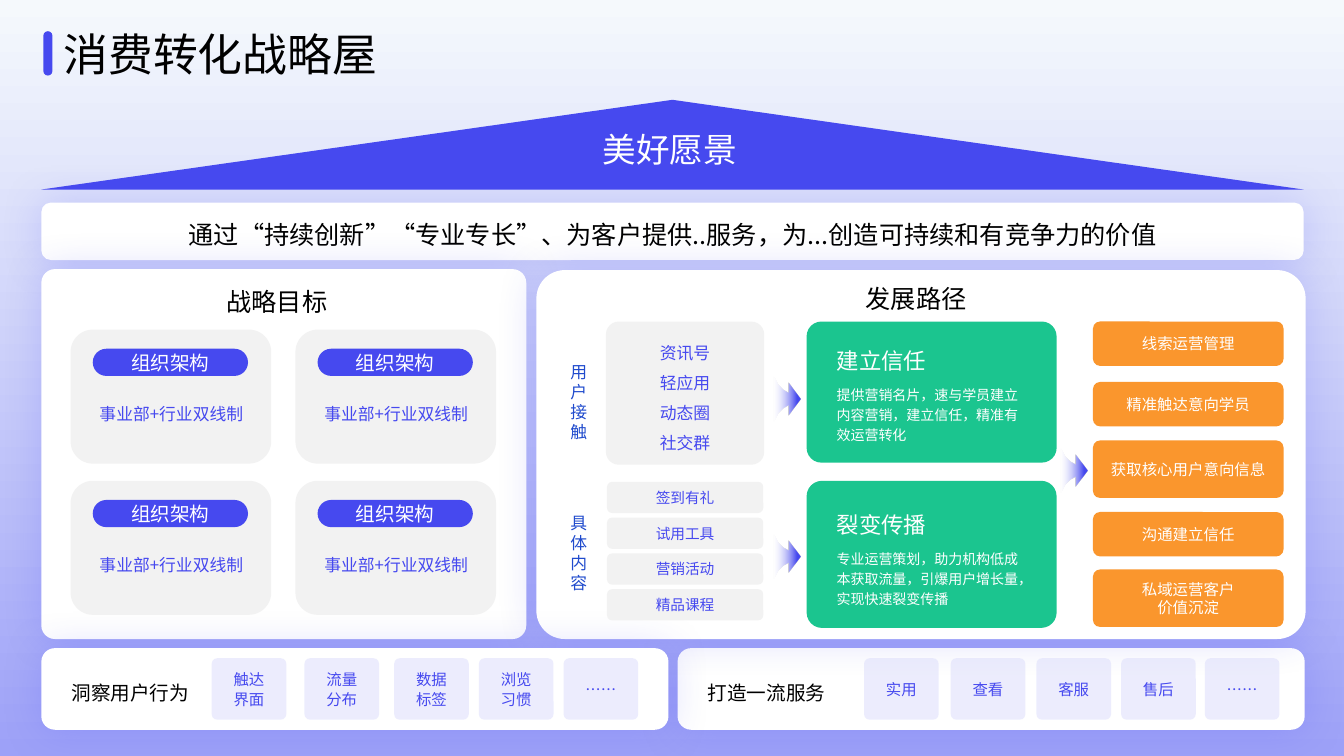
from collections import namedtuple
from dataclasses import dataclass

from lxml.etree import SubElement
from pptx import Presentation
from pptx.dml.color import RGBColor
from pptx.enum.shapes import MSO_SHAPE as Preset
from pptx.enum.text import MSO_ANCHOR as Anchor, PP_ALIGN as Align
from pptx.oxml.ns import qn
from pptx.util import Inches, Pt


@dataclass(frozen=True)
class Theme:
    font: str = "Noto Sans CJK SC"
    line_height: float = 1.19
    black: str = "000000"
    white: str = "FFFFFF"
    sky: str = "F5F9FC"
    lilac: str = "9DA1F8"
    blue: str = "4649EF"
    deep_blue: str = "204BCD"
    chip: str = "DADBFC"
    grey: str = "F2F2F2"
    green: str = "1BC58F"
    orange: str = "FA962D"
    title: float = 32
    roof: float = 24
    heading: float = 18
    card_title: float = 16
    label: float = 14
    body: float = 12
    small: float = 11
    tag: float = 10.5
    note: float = 10


THEME = Theme()


class Box(namedtuple("Box", "left top width height")):
    def inner(self, left, top, width, height):
        return Box(self.left + left, self.top + top, width, height)

    def lengths(self):
        return [Inches(value) for value in self]


def color(value):
    return RGBColor.from_string(value)


def set_alpha(fill_element, percent):
    SubElement(fill_element.find(".//" + qn("a:srgbClr")), qn("a:alpha"), val=str(percent * 1000))


def write(shape, text, size, ink, align=Align.CENTER, spacing=1.0, anchor=Anchor.MIDDLE,
          side=0.1, top=0.05, wrap=True):
    frame = shape.text_frame
    frame.text = text
    frame.word_wrap = wrap
    frame.vertical_anchor = anchor
    frame.margin_left = frame.margin_right = Inches(side)
    frame.margin_top, frame.margin_bottom = Inches(top), Inches(0.05)
    for paragraph in frame.paragraphs:
        paragraph.alignment = align
        paragraph.line_spacing = Pt(round(size * THEME.line_height * spacing, 1))
        for run in paragraph.runs:
            run.font.size = Pt(size)
            run.font.name = THEME.font
            run.font.bold = False
            run.font.color.rgb = color(ink)
            SubElement(run.font._element, qn("a:ea"), typeface=THEME.font)


def add_label(slide, box, text, size, ink, align=Align.LEFT, spacing=1.0, wrap=True):
    label = slide.shapes.add_textbox(*box.lengths())
    write(label, text, size, ink, align, spacing, Anchor.TOP, top=0.05 + size * 0.09 / 72, wrap=wrap)


def add_block(slide, box, fill, preset=Preset.ROUNDED_RECTANGLE, corner=None):
    block = slide.shapes.add_shape(preset, *box.lengths())
    block.shadow.inherit = False
    block.fill.solid()
    block.fill.fore_color.rgb = color(fill)
    block.line.fill.background()
    if corner is not None:
        block.adjustments[0] = corner
    return block


def add_panel(slide, box, corner=None):
    panel = add_block(slide, box, THEME.white, corner=corner)
    effects = panel._element.spPr.find(qn("a:effectLst"))
    shadow = SubElement(effects, qn("a:outerShdw"), blurRad=str(Pt(30)), dist="0", dir="0",
                        algn="ctr", rotWithShape="0")
    SubElement(shadow, qn("a:srgbClr"), val=THEME.blue)
    set_alpha(shadow, 20)
    return panel


def set_gradient(fill, angle, stops):
    fill.gradient()
    fill.gradient_angle = angle
    for stop, (position, value) in zip(fill.gradient_stops, stops):
        stop.position = position
        stop.color.rgb = color(value)


def add_arrow(slide, box):
    half = [(0, 0), (0.02, 0.03), (0.05, 0.09), (0.1, 0.14), (0.15, 0.17), (0.15, 0.07)]
    tip = [(0.27, 0.23)]
    outline = half + tip + [(x, 0.46 - y) for x, y in reversed(half)]
    points = [(Inches(box.left + x), Inches(box.top + y)) for x, y in outline]
    builder = slide.shapes.build_freeform(*points[0], scale=1.0)
    builder.add_line_segments(points[1:], close=True)
    arrow = builder.convert_to_shape()
    arrow.shadow.inherit = False
    arrow.line.fill.background()
    set_gradient(arrow.fill, 0, [(0.01, THEME.chip), (0.86, THEME.blue)])
    set_alpha(arrow._element.spPr.find(qn("a:gradFill")), 0)


def build_title(slide, box):
    title = slide.shapes.title
    title.left, title.top, title.width, title.height = box.inner(0.1, 0, 3.34, 0.64).lengths()
    write(title, "消费转化战略屋", THEME.title, THEME.black, Align.LEFT, anchor=Anchor.TOP,
          top=0.09, wrap=False)
    add_block(slide, box.inner(0, 0.13, 0.09, 0.44), THEME.blue, corner=0.5)


def build_roof(slide, box):
    add_block(slide, box, THEME.blue, Preset.ISOSCELES_TRIANGLE)
    add_label(slide, box.inner(5.47, 0.21, 1.55, 0.5), "美好愿景", THEME.roof, THEME.white, wrap=False)


def build_statement(slide, box):
    write(add_panel(slide, box), "通过“持续创新”“专业专长”、为客户提供..服务，为...创造可持续和有竞争力的价值",
          THEME.heading, THEME.black, spacing=1.2)


def build_goals(slide, box):
    add_label(slide, box.inner(1.73, 0.1, 1.21, 0.4), "战略目标", THEME.heading, THEME.black, Align.CENTER)
    for row in range(2):
        for column in range(2):
            card = box.inner(0.29 + 2.23 * column, 0.6 + 1.5 * row, 1.99, 1.33)
            add_block(slide, card, THEME.grey)
            pill = add_block(slide, card.inner(0.22, 0.19, 1.54, 0.27), THEME.blue, corner=0.5)
            write(pill, "组织架构", THEME.label, THEME.white, top=0.05)
            add_label(slide, card.inner(0.18, 0.63, 1.64, 0.31), "事业部+行业双线制",
                      THEME.body, THEME.blue, Align.CENTER, 1.2)


def build_green_card(slide, box, heading, note, inset):
    add_block(slide, box, THEME.green, corner=0.105)
    add_label(slide, box.inner(0.2, inset, 1.12, 0.36), heading, THEME.card_title, THEME.white,
              spacing=1.1, wrap=False)
    add_label(slide, box.inner(0.2, inset + 0.39, 2.13, 0.68), note, THEME.note, THEME.white, spacing=1.2)


def build_path(slide, box):
    add_label(slide, box.inner(3.16, 0.06, 1.21, 0.4), "发展路径", THEME.heading, THEME.black, Align.CENTER)
    for top, name in [(0.85, "用户接触"), (2.34, "具体内容")]:
        add_label(slide, box.inner(0.24, top, 0.37, 0.91), name, THEME.body, THEME.deep_blue)

    channels = add_block(slide, box.inner(0.69, 0.51, 1.57, 1.42), THEME.grey, corner=0.09)
    write(channels, "资讯号\n轻应用\n动态圈\n社交群", THEME.body, THEME.blue, spacing=1.5)
    for index, name in enumerate(["签到有礼", "试用工具", "营销活动", "精品课程"]):
        content = add_block(slide, box.inner(0.7, 2.1 + 0.355 * index, 1.55, 0.31), THEME.grey)
        write(content, name, THEME.tag, THEME.blue)

    build_green_card(slide, box.inner(2.68, 0.51, 2.48, 1.4), "建立信任",
                     "提供营销名片，速与学员建立内容营销，建立信任，精准有效运营转化", 0.16)
    build_green_card(slide, box.inner(2.68, 2.09, 2.48, 1.46), "裂变传播",
                     "专业运营策划，助力机构低成本获取流量，引爆用户增长量，实现快速裂变传播", 0.21)

    outcomes = [(0.51, 0.44, "线索运营管理"), (1.11, 0.44, "精准触达意向学员"),
                (1.69, 0.57, "获取核心用户意向信息"), (2.4, 0.44, "沟通建立信任"),
                (2.97, 0.57, "私域运营客户\n价值沉淀")]
    for top, height, name in outcomes:
        outcome = add_block(slide, box.inner(5.52, top, 1.89, height), THEME.orange, corner=0.07 / height)
        write(outcome, name, THEME.small, THEME.white)
    for left, top in [(2.35, 1.05), (2.35, 2.61), (5.2, 1.76)]:
        add_arrow(slide, box.inner(left, top, 0.27, 0.46))


def build_foundation(slide, box, label_left, heading, chips):
    add_label(slide, box.inner(label_left, 0.24, 1.46, 0.33), heading, THEME.label, THEME.black, spacing=1.1)
    for left, name in chips:
        chip = add_block(slide, box.inner(left, 0.1, 0.74, 0.61), THEME.chip, corner=0.09)
        set_alpha(chip._element.spPr.find(qn("a:solidFill")), 50)
        write(chip, name, THEME.small, THEME.blue, spacing=1.1, side=0.18)


def main():
    presentation = Presentation()
    presentation.slide_width, presentation.slide_height = Inches(13.33), Inches(7.5)
    slide = presentation.slides.add_slide(presentation.slide_layouts[5])
    set_gradient(slide.background.fill, 270, [(0, THEME.sky), (1, THEME.lilac)])

    goals = Box(0.41, 2.67, 4.81, 3.67)
    path = Box(5.32, 2.68, 7.63, 3.66)
    insight = Box(0.41, 6.43, 6.22, 0.81)
    service = Box(6.72, 6.43, 6.22, 0.81)

    add_panel(slide, service)
    build_roof(slide, Box(0.41, 0.99, 12.52, 0.89))
    build_statement(slide, Box(0.41, 2.01, 12.52, 0.57))
    add_panel(slide, goals, 0.037)
    add_panel(slide, path, 0.077)
    add_panel(slide, insight)
    build_title(slide, Box(0.43, 0.18, 3.44, 0.64))
    build_goals(slide, goals)
    build_path(slide, path)
    build_foundation(slide, insight, 0.2, "洞察用户行为",
                     [(1.69, "触达界面"), (2.61, "流量分布"), (3.5, "数据标签"),
                      (4.34, "浏览习惯"), (5.18, "……")])
    build_foundation(slide, service, 0.2, "打造一流服务",
                     [(1.85, "实用"), (2.71, "查看"), (3.56, "客服"), (4.4, "售后"), (5.23, "……")])
    presentation.save("out.pptx")


if __name__ == "__main__":
    main()
